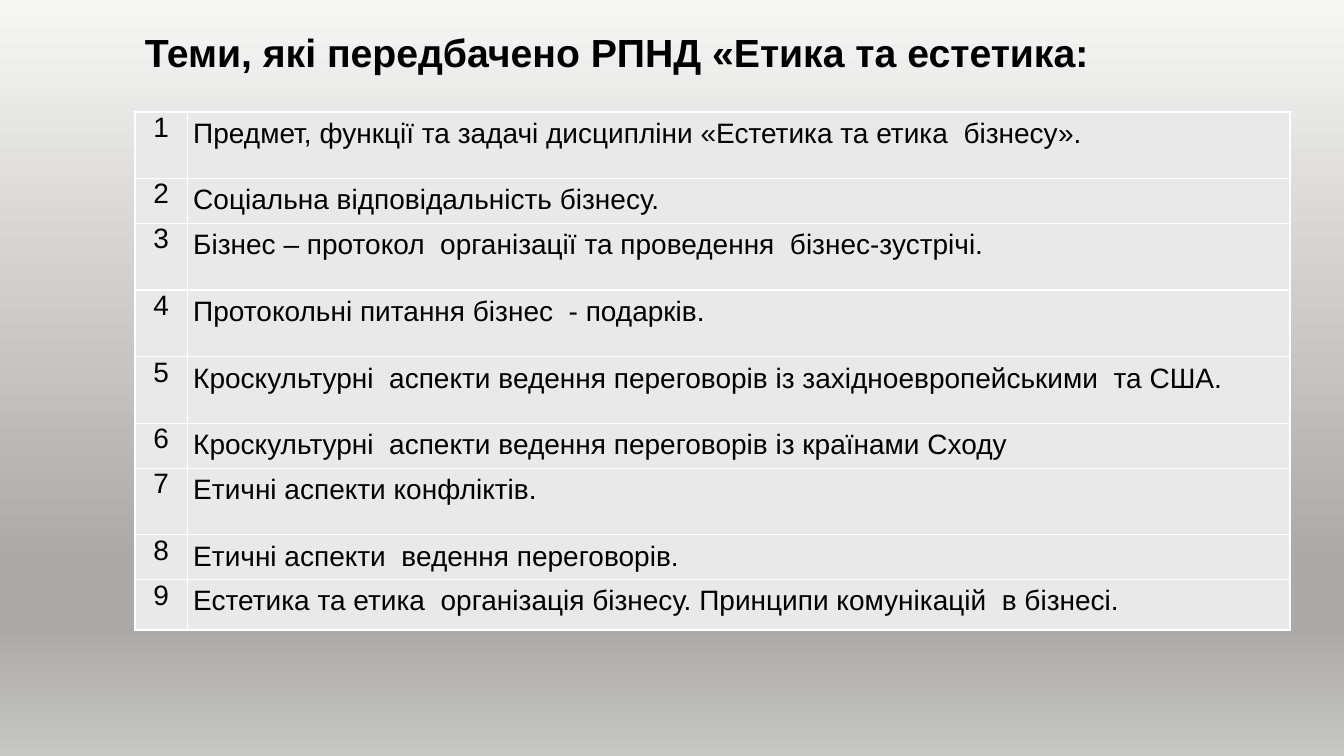
from lxml import etree
from pptx import Presentation
from pptx.dml.color import RGBColor
from pptx.enum.text import MSO_ANCHOR, PP_ALIGN
from pptx.oxml.ns import qn
from pptx.util import Cm, Pt

TOP = MSO_ANCHOR.TOP
LEFT, CENTER, JUSTIFY = PP_ALIGN.LEFT, PP_ALIGN.CENTER, PP_ALIGN.JUSTIFY

TOPICS = [
    ("Предмет, функції та задачі дисципліни «Естетика та етика  бізнесу».", 1.68, LEFT),
    ("Соціальна відповідальність бізнесу.", 1.13, LEFT),
    ("Бізнес – протокол  організації та проведення  бізнес-зустрічі.", 1.68, LEFT),
    ("Протокольні питання бізнес  - подарків.", 1.68, JUSTIFY),
    ("Кроскультурні  аспекти ведення переговорів із західноевропейськими  та США.", 1.68, JUSTIFY),
    ("Кроскультурні  аспекти ведення переговорів із країнами Сходу", 1.13, JUSTIFY),
    ("Етичні аспекти конфліктів.", 1.68, LEFT),
    ("Етичні аспекти  ведення переговорів.", 1.13, JUSTIFY),
    ("Естетика та етика  організація бізнесу. Принципи комунікацій  в бізнесі.", 1.27, LEFT),
]
BACKGROUND = [(0, "F6F6F5"), (74, "ACAAA9"), (83, "ACAAA9"), (100, "C7C7C6")]


def add_color(parent, value):
    etree.SubElement(parent, qn("a:srgbClr"), val=value)


def write(p, text, align, **font):
    p.alignment = align
    r = p.add_run()
    r.text = text
    r.font.color.rgb = RGBColor.from_string("000000")
    for name, value in font.items():
        setattr(r.font, name, value)


prs = Presentation()
prs.slide_width, prs.slide_height = Cm(33.87), Cm(19.05)
s = prs.slides.add_slide(prs.slide_layouts[5])

fill = s.background.fill
fill.gradient()
fill.gradient_angle = 270
stops = s.background._cSld.find(".//" + qn("a:gsLst"))
for stop in list(stops):
    stops.remove(stop)
for position, value in BACKGROUND:
    add_color(etree.SubElement(stops, qn("a:gs"), pos=str(position * 1000)), value)

title = s.shapes.title
title.left, title.top, title.width, title.height = Cm(3.4), Cm(0.58), Cm(24.59), Cm(2.24)
tf = title.text_frame
tf.word_wrap = False
tf.vertical_anchor = TOP
write(tf.paragraphs[0], "Теми, які передбачено РПНД «Етика та естетика:", LEFT,
      name="Arial", size=Pt(28), bold=True)

height = sum(topic[1] for topic in TOPICS)
table = s.shapes.add_table(len(TOPICS), 2, Cm(3.4), Cm(2.82), Cm(29.11), Cm(height)).table
table.first_row = table.horz_banding = False
for column, width in zip(table.columns, (1.32, 27.79)):
    column.width = Cm(width)

for i, (topic, row_height, align) in enumerate(TOPICS):
    table.rows[i].height = Cm(row_height)
    columns = [(str(i + 1), CENTER, 0.18, 0), (topic, align, 0.15, 0.15)]
    for j, (text, cell_align, side, edge) in enumerate(columns):
        cell = table.cell(i, j)
        margins = {"margin_left": side, "margin_right": side,
                   "margin_top": edge, "margin_bottom": edge}
        for name, value in margins.items():
            setattr(cell, name, Cm(value))
        cell.vertical_anchor = TOP
        write(cell.text_frame.paragraphs[0], text, cell_align, name="Arial", size=Pt(20))
        tcPr = cell._tc.get_or_add_tcPr()
        for border in ("a:lnL", "a:lnR", "a:lnT", "a:lnB"):
            ln = etree.SubElement(tcPr, qn(border), w=str(Pt(1)))
            add_color(etree.SubElement(ln, qn("a:solidFill")), "FFFFFF")
        cell.fill.solid()
        cell.fill.fore_color.rgb = RGBColor.from_string("E9E9E9")

prs.save("out.pptx")
